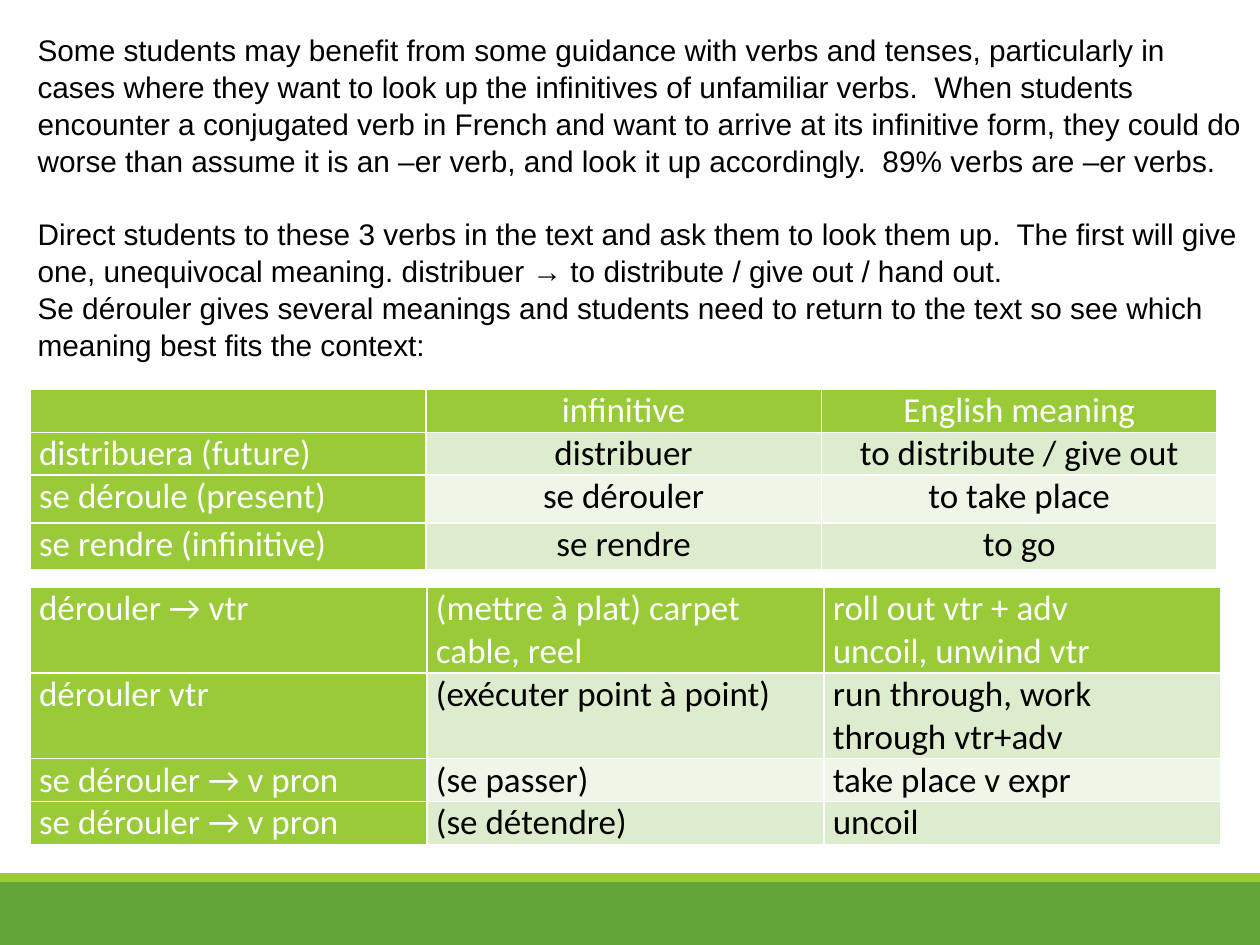
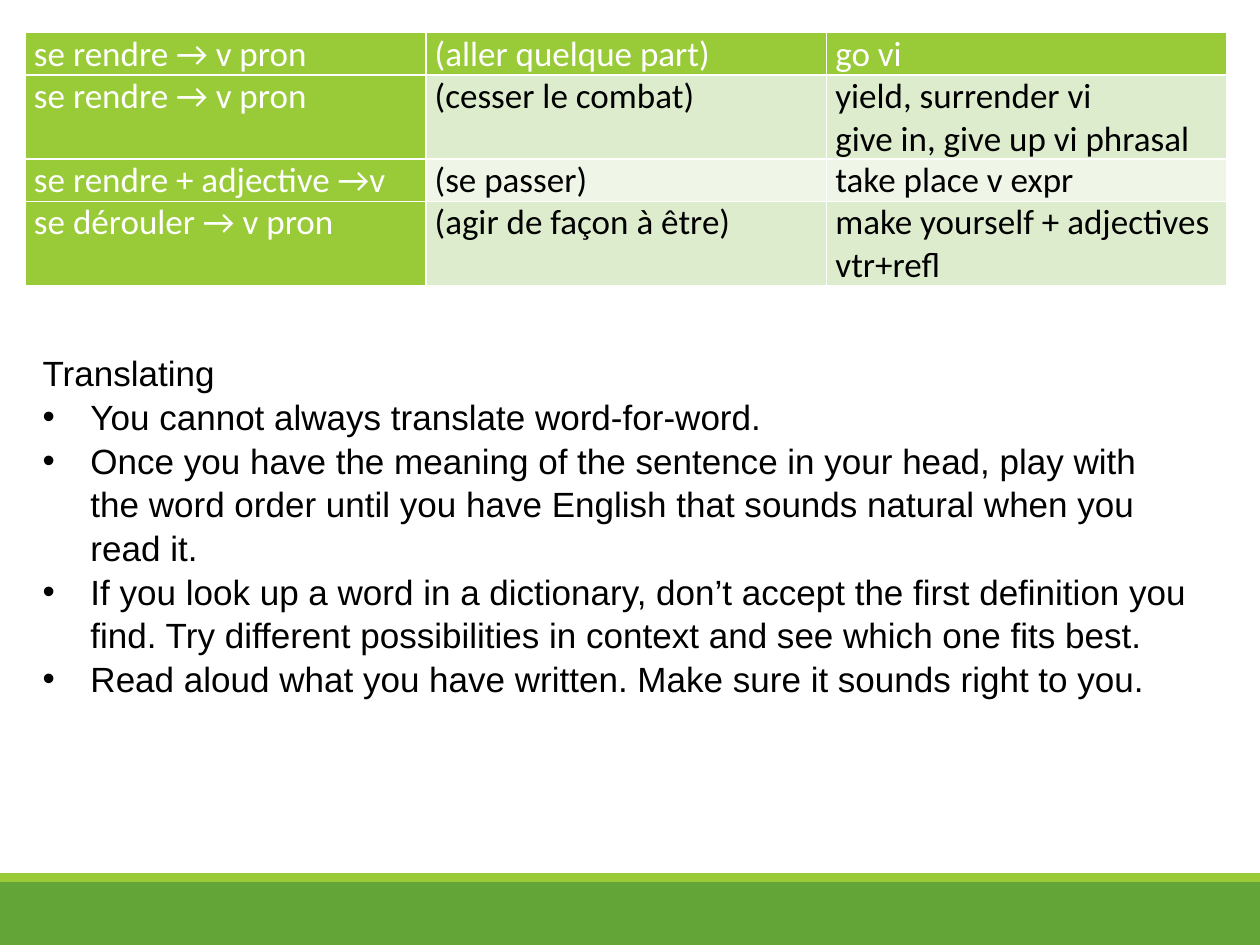
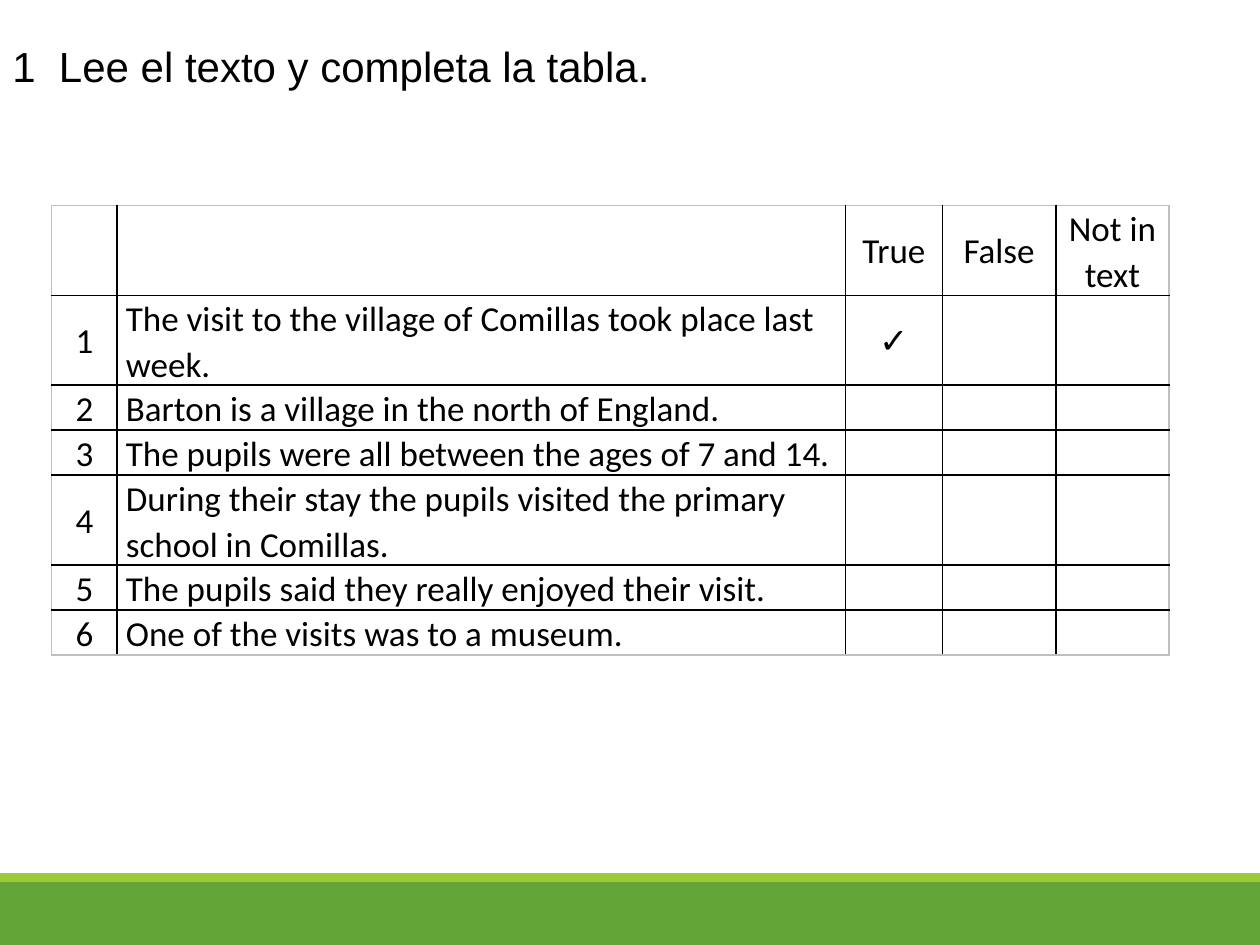
from lxml import etree
from pptx import Presentation
from pptx.dml.color import RGBColor
from pptx.enum import shapes, text
from pptx.oxml import ns
from pptx.util import Inches, Pt

WIDTH, HEIGHT = 10, 7.5
DARK_GREEN = RGBColor(0x63, 0xA5, 0x37)
LIME = RGBColor(0x99, 0xCB, 0x38)
PALE_GREEN = RGBColor(0xDE, 0xEC, 0xCE)
PALEST_GREEN = RGBColor(0xEF, 0xF6, 0xE8)
WHITE = RGBColor(0xFF, 0xFF, 0xFF)
BLACK = RGBColor(0, 0, 0)
GREY = RGBColor(0xBF, 0xBF, 0xBF)
BODY_FONT, TABLE_FONT = "Arial", "Calibri"
LINE_SPACING = 1.04
TABLE_SIZE = 20
ROW = 0.34

GUIDANCE = [
    "Some students may benefit from some guidance with verbs and tenses, particularly in cases "
    "where they want to look up the infinitives of unfamiliar verbs.  When students encounter a "
    "conjugated verb in French and want to arrive at its infinitive form, they could do worse than "
    "assume it is an –er verb, and look it up accordingly.  89% verbs are –er verbs.",
    "Direct students to these 3 verbs in the text and ask them to look them up.  The first will "
    "give one, unequivocal meaning. distribuer → to distribute / give out / hand out.",
    "Se dérouler gives several meanings and students need to return to the text so see which "
    "meaning best fits the context:",
]
INFINITIVES = [
    ("", "infinitive", "English meaning"),
    ("distribuera (future)", "distribuer", "to distribute / give out"),
    ("se déroule (present)", "se dérouler", "to take place"),
    ("se rendre (infinitive)", "se rendre", "to go"),
]
DEROULER = [
    ("dérouler → vtr", "(mettre à plat) carpet\ncable, reel", "roll out vtr + adv\nuncoil, unwind vtr"),
    ("dérouler vtr", "(exécuter point à point)", "run through, work through vtr+adv"),
    ("se dérouler → v pron", "(se passer)", "take place v expr"),
    ("se dérouler → v pron", "(se détendre)", "uncoil"),
]
SE_RENDRE = [
    ("se rendre → v pron", "(aller quelque part)", "go vi"),
    ("se rendre → v pron", "(cesser le combat)", "yield, surrender vi\ngive in, give up vi phrasal"),
    ("se rendre + adjective →v", "(se passer)", "take place v expr"),
    ("se dérouler → v pron", "(agir de façon à être)", "make yourself + adjectives vtr+refl"),
]
TRANSLATING = [
    "Translating",
    "You cannot always translate word-for-word.",
    "Once you have the meaning of the sentence in your head, play with the word order until you "
    "have English that sounds natural when you read it.",
    "If you look up a word in a dictionary, don’t accept the first definition you find. Try "
    "different possibilities in context and see which one fits best.",
    "Read aloud what you have written. Make sure it sounds right to you.",
]
TASK = ["1  Lee el texto y completa la tabla."]
STATEMENTS = [
    "The visit to the village of Comillas took place last week.",
    "Barton is a village in the north of England.",
    "The pupils were all between the ages of 7 and 14.",
    "During their stay the pupils visited the primary school in Comillas.",
    "The pupils said they really enjoyed their visit.",
    "One of the visits was to a museum.",
]
ANSWERS = {1: "✓"}
QUIZ = [("", "", "True", "False", "Not in text")] + [
    (str(number), statement, ANSWERS.get(number, ""), "", "")
    for number, statement in enumerate(STATEMENTS, 1)
]


def add_slide(presentation):
    """Add a blank slide with the two green bands at its foot."""
    slide = presentation.slides.add_slide(presentation.slide_layouts[6])
    for top, height, color in ((7, 0.5, DARK_GREEN), (6.93, 0.07, LIME)):
        band = slide.shapes.add_shape(
            shapes.MSO_SHAPE.RECTANGLE, 0, Inches(top), Inches(WIDTH), Inches(height))
        band.shadow.inherit = False
        band.fill.solid()
        band.fill.fore_color.rgb = color
        band.line.fill.background()
    return slide


def style_paragraph(paragraph, font_name, size, color=BLACK):
    for run in paragraph.runs:
        run.font.name = font_name
        run.font.size = Pt(size)
        run.font.color.rgb = color


def add_text(slide, left, top, width, height, lines, size, wrap=True):
    box = slide.shapes.add_textbox(Inches(left), Inches(top), Inches(width), Inches(height))
    frame = box.text_frame
    frame.word_wrap = wrap
    frame.text = "\n".join(lines)
    for paragraph in frame.paragraphs:
        paragraph.line_spacing = LINE_SPACING
        style_paragraph(paragraph, BODY_FONT, size)
    return frame.paragraphs


def add_bullet(paragraph, indent=0.38):
    properties = paragraph._p.get_or_add_pPr()
    properties.set("marL", str(Inches(indent)))
    properties.set("indent", str(-Inches(indent)))
    font = etree.SubElement(properties, ns.qn("a:buFont"))
    font.set("typeface", BODY_FONT)
    etree.SubElement(properties, ns.qn("a:buChar")).set("char", "•")


def set_borders(cell, borders):
    """Draw the left, right, top and bottom borders, each a colour and a width in points."""
    properties = cell._tc.get_or_add_tcPr()
    for index, (side, (color, width)) in enumerate(zip("LRTB", borders)):
        line = etree.Element(ns.qn(f"a:ln{side}"), w=str(Pt(width)))
        fill = etree.SubElement(line, ns.qn("a:solidFill"))
        etree.SubElement(fill, ns.qn("a:srgbClr")).set("val", str(color))
        properties.insert(index, line)


def add_table(slide, left, top, columns, heights, rows, style_cell):
    frame = slide.shapes.add_table(
        len(rows), len(columns), Inches(left), Inches(top),
        Inches(sum(columns)), Inches(sum(heights)))
    table = frame.table
    table.first_row = table.horz_banding = False
    for column, width in zip(table.columns, columns):
        column.width = Inches(width)
    for r, (row, height) in enumerate(zip(rows, heights)):
        table.rows[r].height = Inches(height)
        for c, content in enumerate(row):
            cell = table.cell(r, c)
            cell.margin_left = cell.margin_right = Inches(0.07)
            cell.margin_top = cell.margin_bottom = 0
            cell.text = content
            style_cell(cell, r, c)


def add_verb_table(slide, left, top, column, heights, rows, centred=False):
    """Add a three-column table with a lime head row and first column."""
    def style_cell(cell, r, c):
        is_head = r == 0 or c == 0
        cell.fill.solid()
        cell.fill.fore_color.rgb = LIME if is_head else (PALEST_GREEN, PALE_GREEN)[r % 2]
        set_borders(cell, [(WHITE, 1)] * 4)
        for paragraph in cell.text_frame.paragraphs:
            style_paragraph(paragraph, TABLE_FONT, TABLE_SIZE, WHITE if is_head else BLACK)
            if centred and c > 0:
                paragraph.alignment = text.PP_ALIGN.CENTER

    add_table(slide, left, top, [column] * 3, heights, rows, style_cell)


def add_quiz_table(slide, left, top, columns, heights, rows):
    def style_cell(cell, r, c):
        cell.fill.background()
        cell.vertical_anchor = text.MSO_ANCHOR.MIDDLE
        on_edge = (c == 0, c == len(columns) - 1, r == 0, r == len(rows) - 1)
        set_borders(cell, [(GREY if edge else BLACK, 1) for edge in on_edge])
        paragraph = cell.text_frame.paragraphs[0]
        paragraph.line_spacing = 1.07
        style_paragraph(paragraph, TABLE_FONT, TABLE_SIZE)
        if c != 1:
            paragraph.alignment = text.PP_ALIGN.CENTER

    add_table(slide, left, top, columns, heights, rows, style_cell)


def main():
    presentation = Presentation()
    presentation.slide_width, presentation.slide_height = Inches(WIDTH), Inches(HEIGHT)

    slide = add_slide(presentation)
    add_verb_table(slide, 0.24, 3.09, 3.14, [ROW, ROW, 0.38, 0.37], INFINITIVES, centred=True)
    add_verb_table(slide, 0.24, 4.66, 3.15, [2 * ROW, 2 * ROW, ROW, ROW], DEROULER)
    guidance = add_text(slide, 0.2, 0.19, 9.8, 3.82, GUIDANCE, 17)
    guidance[0].space_after = Pt(20.4)

    slide = add_slide(presentation)
    add_verb_table(slide, 0.2, 0.26, 3.18, [0.33, 0.67, 0.33, 0.67], SE_RENDRE)
    for paragraph in add_text(slide, 0.24, 2.73, 9.33, 2.46, TRANSLATING, 20)[1:]:
        add_bullet(paragraph)

    slide = add_slide(presentation)
    quiz_row = 3.57 / 10
    quiz_heights = [quiz_row * lines for lines in (2, 2, 1, 1, 2, 1, 1)]
    add_quiz_table(slide, 0.41, 1.63, [0.52, 5.78, 0.77, 0.9, 0.9], quiz_heights, QUIZ)
    add_text(slide, 0, 0.26, 5.5, 1.11, TASK, 24, wrap=False)

    presentation.save("out.pptx")


if __name__ == "__main__":
    main()
